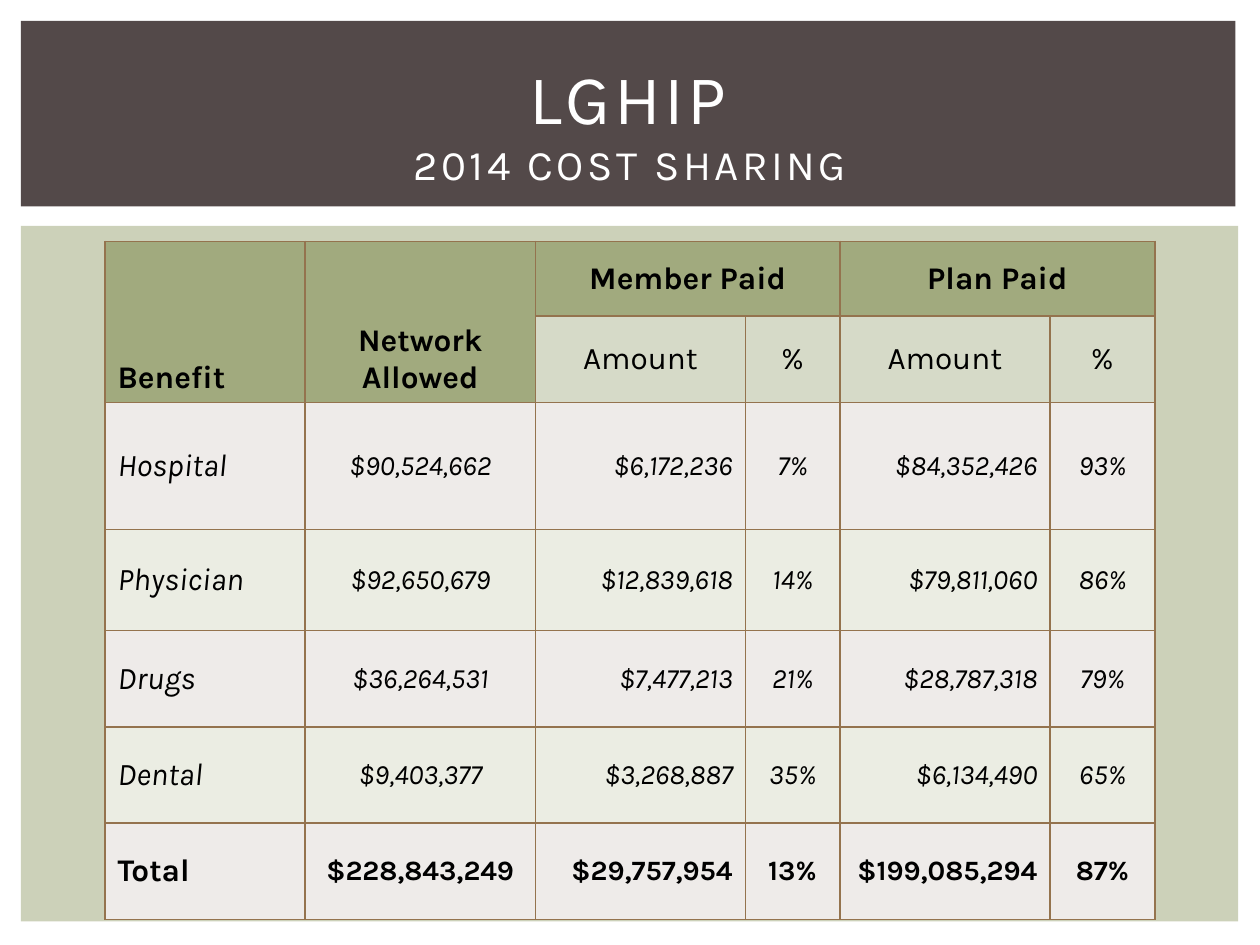
from lxml import etree
from pptx import Presentation
from pptx.dml.color import RGBColor
from pptx.enum.shapes import MSO_SHAPE
from pptx.enum.text import MSO_ANCHOR, PP_ALIGN
from pptx.oxml.ns import qn
from pptx.util import Pt

LEFT, CENTER, RIGHT = PP_ALIGN.LEFT, PP_ALIGN.CENTER, PP_ALIGN.RIGHT
MIDDLE, BOTTOM = MSO_ANCHOR.MIDDLE, MSO_ANCHOR.BOTTOM
RECTANGLE = MSO_SHAPE.RECTANGLE

FONT = "Karla"
BLACK, WHITE = "000000", "FFFFFF"
HEADER_FILL, SUBHEADER_FILL = "A1AA7E", "D6DAC8"
BAND_FILLS = ["EEEBE9", "EBEDE3"]
BORDER = "94734E"

PANELS = [  # left, top, width, height, fill
    (12, 129, 695.5, 397.5, "CCD1B9"),
    (12, 12, 694, 106, "534949"),
]
TITLE_BOX = (30, 28, 660, 83)
TITLE_LINES = [("LGHIP", 40), ("2014 COST SHARING", 24)]

TABLE_LEFT, TABLE_TOP = 60, 138
COLUMN_WIDTHS = [114.3, 131.7, 119.9, 54, 120.1, 60]
ROW_HEIGHTS = [42.5, 42.5, 72.5, 58, 55, 55, 55]
HEADERS = [  # text, row, column, last row, last column, alignment, anchor
    ("Benefit", 0, 0, 1, 0, LEFT, BOTTOM),
    ("Network Allowed", 0, 1, 1, 1, CENTER, BOTTOM),
    ("Member Paid", 0, 2, 0, 3, CENTER, MIDDLE),
    ("Plan Paid", 0, 4, 0, 5, CENTER, MIDDLE),
]
SUBHEADERS = ["Amount", "%", "Amount", "%"]
BENEFITS = [
    ("Hospital", "$90,524,662", "$6,172,236", "7%", "$84,352,426", "93%"),
    ("Physician", "$92,650,679", "$12,839,618", "14%", "$79,811,060", "86%"),
    ("Drugs", "$36,264,531", "$7,477,213", "21%", "$28,787,318", "79%"),
    ("Dental", "$9,403,377", "$3,268,887", "35%", "$6,134,490", "65%"),
    ("Total", "$228,843,249", "$29,757,954", "13%", "$199,085,294", "87%"),
]
ALIGNMENTS = [LEFT, CENTER, RIGHT, CENTER, RIGHT, CENTER]


def color(hex_string):
    return RGBColor.from_string(hex_string)


def set_font(font, size, hex_color):
    font.name, font.size = FONT, Pt(size)
    font.color.rgb = color(hex_color)


def add_panel(page, left, top, width, height, fill):
    panel = page.shapes.add_shape(RECTANGLE, Pt(left), Pt(top), Pt(width), Pt(height))
    panel.shadow.inherit = False
    panel.fill.solid()
    panel.fill.fore_color.rgb = color(fill)
    panel.line.fill.background()


def add_title(page):
    box = page.shapes.add_textbox(*map(Pt, TITLE_BOX))
    frame = box.text_frame
    frame.word_wrap = True
    frame.vertical_anchor = MIDDLE
    para = frame.paragraphs[0]
    para.alignment = CENTER
    for index, (text, size) in enumerate(TITLE_LINES):
        if index:
            para.add_line_break()
        span = para.add_run()
        span.text = text
        set_font(span.font, size, WHITE)
        span.font._element.set("spc", "200")


def add_borders(cell):
    """Put a thin line on all four sides; must come before the cell's fill."""
    properties = cell._tc.get_or_add_tcPr()
    for side in ("a:lnL", "a:lnR", "a:lnT", "a:lnB"):
        line = etree.SubElement(properties, qn(side), w=str(Pt(1)))
        fill = etree.SubElement(line, qn("a:solidFill"))
        etree.SubElement(fill, qn("a:srgbClr"), val=BORDER)


def fill_cell(cell, text, fill, alignment, size=18, bold=False, italic=False, anchor=MIDDLE):
    cell.fill.solid()
    cell.fill.fore_color.rgb = color(fill)
    cell.vertical_anchor = anchor
    cell.text = text
    para = cell.text_frame.paragraphs[0]
    para.alignment = alignment
    set_font(para.font, size, BLACK)
    para.font.bold, para.font.italic = bold, italic


def add_cost_table(page):
    frame = page.shapes.add_table(
        len(ROW_HEIGHTS), len(COLUMN_WIDTHS), Pt(TABLE_LEFT), Pt(TABLE_TOP),
        Pt(sum(COLUMN_WIDTHS)), Pt(sum(ROW_HEIGHTS)))
    table = frame.table
    for column, width in zip(table.columns, COLUMN_WIDTHS):
        column.width = Pt(width)
    for row, height in zip(table.rows, ROW_HEIGHTS):
        row.height = Pt(height)
    for cell in table.iter_cells():
        add_borders(cell)

    for text, top, left, bottom, right, alignment, anchor in HEADERS:
        cell = table.cell(top, left)
        cell.merge(table.cell(bottom, right))
        fill_cell(cell, text, HEADER_FILL, alignment, bold=True, anchor=anchor)
    for column, text in enumerate(SUBHEADERS, start=2):
        fill_cell(table.cell(1, column), text, SUBHEADER_FILL, CENTER)
    for index, values in enumerate(BENEFITS):
        is_total = index == len(BENEFITS) - 1
        for column, text in enumerate(values):
            fill_cell(table.cell(index + 2, column), text, BAND_FILLS[index % 2],
                      ALIGNMENTS[column], size=16 if column else 18,
                      bold=is_total, italic=not is_total)


def main():
    deck = Presentation()
    deck.slide_width, deck.slide_height = Pt(720), Pt(540)
    page = deck.slides.add_slide(deck.slide_layouts[6])
    for panel in PANELS:
        add_panel(page, *panel)
    add_cost_table(page)
    add_title(page)
    deck.save("out.pptx")


if __name__ == "__main__":
    main()
